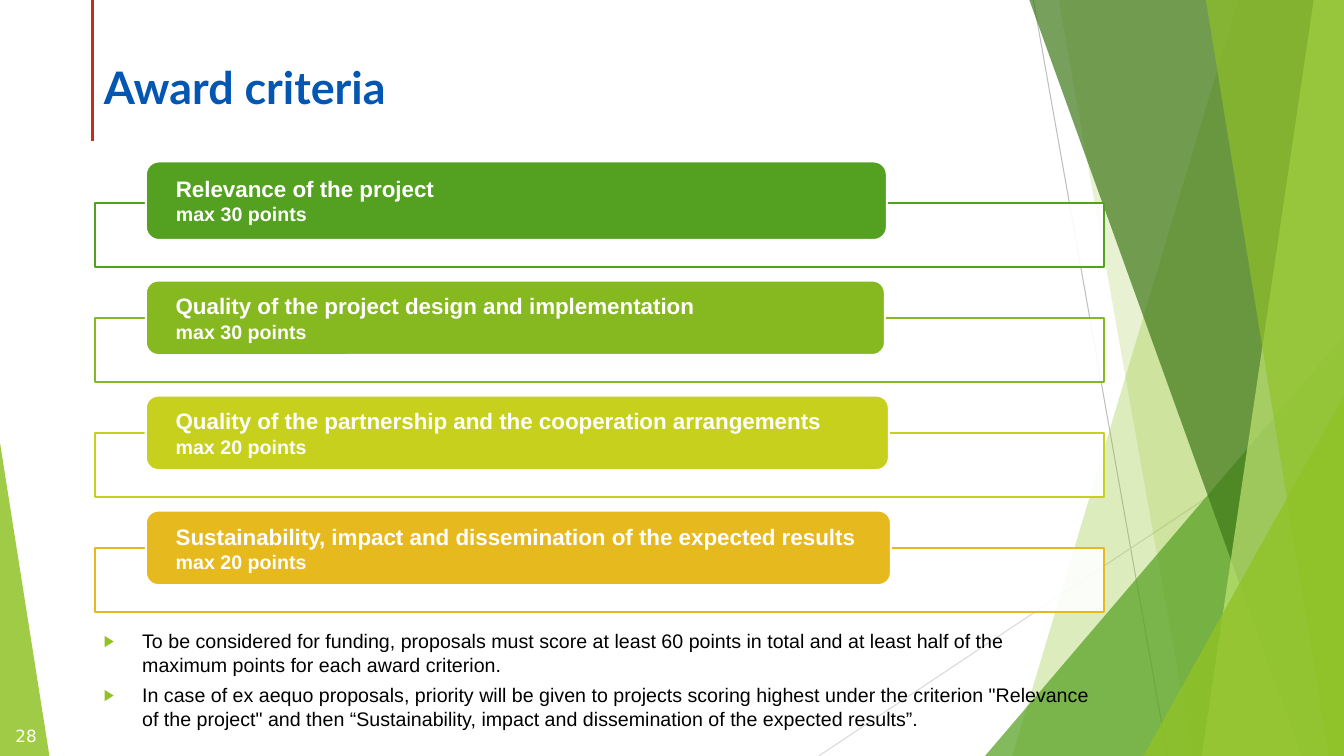
"""Build the award criteria slide with its faceted green frame."""
from lxml.etree import SubElement
from pptx import Presentation
from pptx.dml.color import RGBColor
from pptx.enum.shapes import MSO_CONNECTOR, MSO_SHAPE
from pptx.enum.text import MSO_ANCHOR, MSO_AUTO_SIZE, PP_ALIGN
from pptx.oxml.ns import qn
from pptx.util import Inches, Pt

THEME = {
    "green": "54A021", "leaf": "90C226", "forest": "3F7819", "mint": "C0E474",
    "white": "FFFFFF", "black": "000000", "blue": "0356B1", "red": "C42F1A",
    "grey": "BFBFBF", "pale": "D9D9D9",
    "bars": ["54A021", "86B820", "C7D01D", "E6B91E"],
    "title": {"name": "Lato", "size": Pt(32), "bold": True},
    "criterion": {"name": "Arial", "size": Pt(16), "bold": True},
    "points": {"name": "Arial", "size": Pt(14), "bold": True},
    "body": {"name": "Arial", "size": Pt(14), "bold": False},
    "number": {"name": "DejaVu Sans", "size": Pt(12), "bold": False},
}

presentation = Presentation()
presentation.slide_width, presentation.slide_height = Inches(13.33), Inches(7.5)
slide = presentation.slides.add_slide(presentation.slide_layouts[1])


def place(*shares):
    """Turn alternating percentages of slide width and height into lengths."""
    sides = (presentation.slide_width, presentation.slide_height)
    return [round(share * sides[index % 2] / 100) for index, share in enumerate(shares)]


def style(item, formats, colour=None):
    """Set attributes from a dict and, for a font or line, its colour."""
    for name, value in formats.items():
        setattr(item, name, value)
    if colour:
        item.color.rgb = RGBColor.from_string(colour)


rules = [
    (76.89, 0, 86.87, 100, "grey", 0.75),
    (100, 53.73, 60.92, 100, "pale", 0.75),
    (6.9, 0, 6.9, 18.67, "red", 2.25),
]
for *ends, colour, weight in rules:
    connector = slide.shapes.add_connector(MSO_CONNECTOR.STRAIGHT, *place(*ends))
    style(connector.line, {"width": Pt(weight)}, THEME[colour])
    SubElement(connector.element.spPr, qn("a:effectLst"))

facets = [
    ("band", (92.12, 75.32), "leaf", 30),
    ("band", (78.77, 88.75), "leaf", 20),
    ("triangle", (73.29, 44.4, 26.71, 55.6, 1), "green", 72),
    ("band", (76.59, 96.85), "forest", 70),
    ("band", (97.75, 89.42), "mint", 70),
    ("band", (89.72, 98.87), "leaf", 65),
    ("triangle", (85.07, 52.4, 14.93, 47.6, 1), "leaf", 80),
    ("triangle", (0, 58.53, 3.68, 41.47, 0), "leaf", 85),
]
painted = []
for kind, geometry, colour, opacity in facets:
    if kind == "band":
        top, bottom = geometry
        outline = slide.shapes.build_freeform(*place(top, 0))
        outline.add_line_segments(
            [place(*corner) for corner in ((100, 0), (100, 100), (bottom, 100))])
        shape = outline.convert_to_shape()
    else:
        *box, apex = geometry
        shape = slide.shapes.add_shape(MSO_SHAPE.ISOSCELES_TRIANGLE, *place(*box))
        shape.adjustments[0] = apex
    shape.line.fill.background()
    painted.append((shape, THEME[colour], opacity))

criteria = [
    ("Relevance of the project", 30, 55.14, 10.4),
    ("Quality of the project design and implementation", 30, 54.99, 9.87),
    ("Quality of the partnership and the cooperation arrangements", 20, 55.29, 9.87),
    ("Sustainability, impact and dissemination of the expected results", 20, 55.44, 9.87),
]
for row, (criterion, points, width, height) in enumerate(criteria):
    colour = THEME["bars"][row]
    frame_top = 26.85 + 15.22 * row
    frame = slide.shapes.add_shape(
        MSO_SHAPE.RECTANGLE, *place(7.05, frame_top, 75.09, 8.45))
    style(frame.line, {"width": Pt(1.5)}, colour)
    painted.append((frame, THEME["white"], 90))

    bar = slide.shapes.add_shape(
        MSO_SHAPE.ROUNDED_RECTANGLE,
        *place(10.85, frame_top + 4.9 - height, width, height))
    style(bar.line, {"width": Pt(1.5)}, THEME["white"])
    painted.append((bar, colour, 100))
    style(bar.text_frame, {
        "margin_left": Inches(0.26), "margin_right": Inches(0.1),
        "margin_top": 0, "margin_bottom": 0,
        "vertical_anchor": MSO_ANCHOR.MIDDLE, "word_wrap": True})
    bar.text_frame.text = f"{criterion}\nmax {points} points"
    for paragraph, role in zip(bar.text_frame.paragraphs, ("criterion", "points")):
        paragraph.alignment = PP_ALIGN.LEFT
        style(paragraph.font, THEME[role], THEME["white"])

for shape, colour, opacity in painted:
    shape.shadow.inherit = False
    shape.fill.solid()
    shape.fill.fore_color.rgb = RGBColor.from_string(colour)
    if opacity < 100:
        tint = shape.element.spPr.find(qn("a:solidFill"))[0]
        SubElement(tint, qn("a:alpha"), val=str(opacity * 1000))

title, body = slide.placeholders
number = slide.shapes.add_textbox(0, 0, 0, 0)
texts = [
    (title, (6.98, 7.2, 71.57, 11.2), MSO_ANCHOR.TOP, PP_ALIGN.LEFT,
     "title", "blue", ["Award criteria"]),
    (body, (6.98, 82.53, 75.17, 15.07), MSO_ANCHOR.TOP, PP_ALIGN.LEFT,
     "body", "black", [
         "To be considered for funding, proposals must score at least 60 points in total "
         "and at least half of the maximum points for each award criterion.",
         "In case of ex aequo proposals, priority will be given to projects scoring highest "
         "under the criterion \"Relevance of the project\" and then “Sustainability, impact "
         "and dissemination of the expected results”."]),
    (number, (0, 94.67, 3.9, 5.33), MSO_ANCHOR.MIDDLE, PP_ALIGN.CENTER,
     "number", "white", ["28"]),
]
for shape, box, anchor, alignment, role, colour, lines in texts:
    style(shape, dict(zip(("left", "top", "width", "height"), place(*box))))
    style(shape.text_frame, {
        "word_wrap": True, "auto_size": MSO_AUTO_SIZE.NONE, "vertical_anchor": anchor})
    shape.text_frame.text = "\n".join(lines)
    for index, paragraph in enumerate(shape.text_frame.paragraphs):
        paragraph.alignment = alignment
        if shape is body:
            properties = paragraph._p.get_or_add_pPr()
            properties.set("marL", str(Inches(0.38)))
            properties.set("indent", str(-Inches(0.38)))
            bullet_colour = SubElement(properties, qn("a:buClr"))
            SubElement(bullet_colour, qn("a:srgbClr"), val=THEME["leaf"])
            SubElement(properties, qn("a:buSzPct"), val="80000")
            SubElement(properties, qn("a:buFont"), typeface="Arial")
            SubElement(properties, qn("a:buChar"), char="▶")
            style(paragraph, {
                "line_spacing": Pt(17.1), "space_before": Pt(4.2 if index else 0)})
        style(paragraph.font, THEME[role], THEME[colour])

body.element.getparent().append(body.element)
presentation.save("out.pptx")
